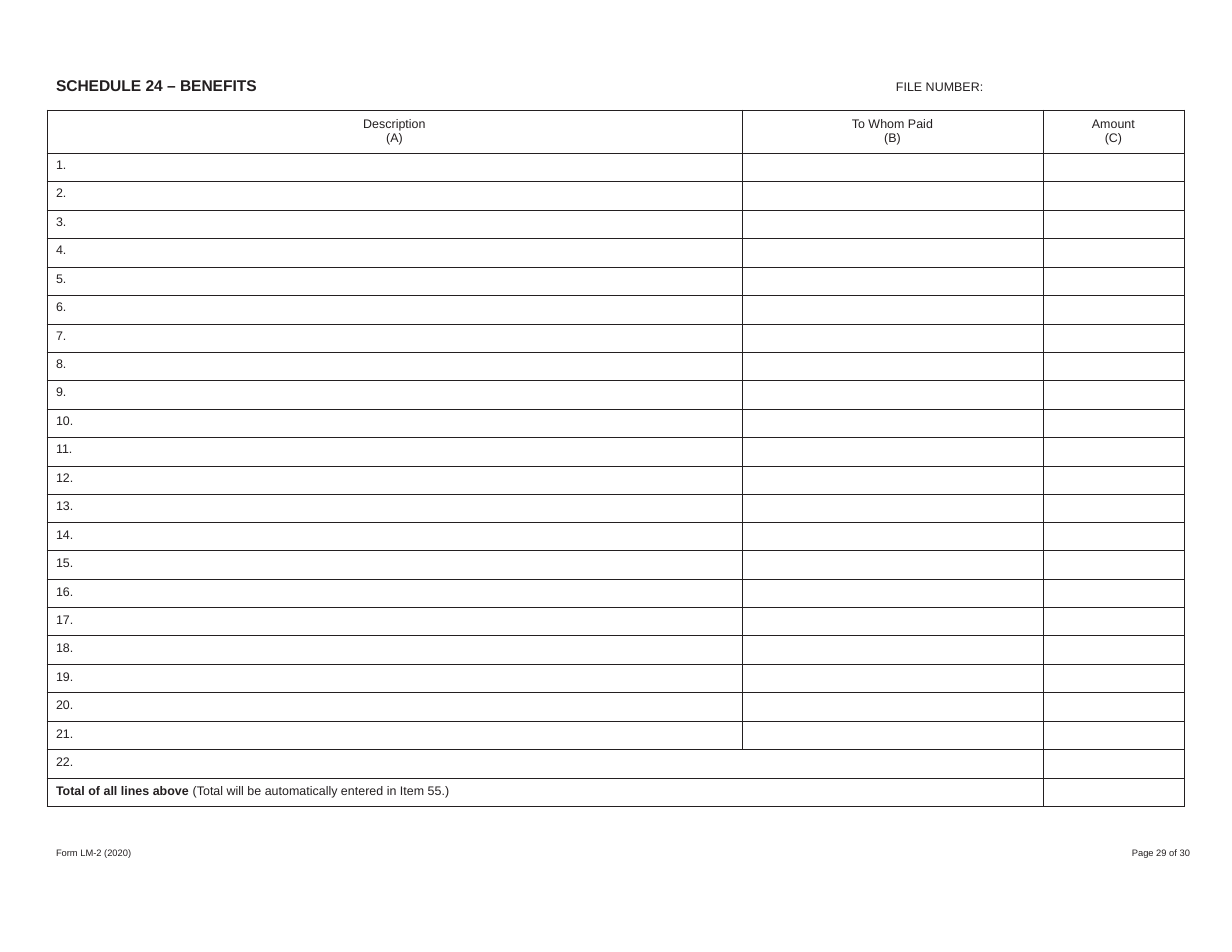
from lxml import etree
from pptx import Presentation
from pptx.dml.color import RGBColor
from pptx.enum.text import MSO_ANCHOR, MSO_AUTO_SIZE, PP_ALIGN
from pptx.oxml.ns import qn
from pptx.util import Emu, Pt

TOP, MIDDLE = MSO_ANCHOR.TOP, MSO_ANCHOR.MIDDLE
LEFT, CENTER, RIGHT = PP_ALIGN.LEFT, PP_ALIGN.CENTER, PP_ALIGN.RIGHT
INK = "231F20"
BORDER_WIDTH = Pt(0.5)
EMU_PER_PX = 914400 / 112


def px(length):
    return Emu(round(length * EMU_PER_PX))


def write(paragraph, spans, size, align=LEFT):
    """Fill a paragraph with (text, bold) spans."""
    paragraph.alignment = align
    for text, bold in spans:
        paragraph.add_line_break() if text == "\n" else None
        if text == "\n":
            continue
        span = paragraph.add_run()
        span.text = text
        for name, value in {"name": "Arial", "size": Pt(size), "bold": bold}.items():
            setattr(span.font, name, value)
        span.font.color.rgb = RGBColor.from_string(INK)


deck = Presentation()
deck.slide_width, deck.slide_height = px(1232), px(952)
page = deck.slides.add_slide(deck.slide_layouts[5])

# Heading, file number and footer
labels = [
    (page.shapes.title, "SCHEDULE 24 – BENEFITS", (56, 76, 204, 20), 10, True, LEFT),
    (None, "FILE NUMBER:", (896, 79, 91, 18), 8, False, LEFT),
    (None, "Form LM-2 (2020)", (56, 847, 202, 12), 6, False, LEFT),
    (None, "Page 29 of 30", (1120, 847, 70, 12), 6, False, RIGHT),
]
for box, text, place, size, bold, align in labels:
    left, top, width, height = map(px, place)
    if box is None:
        box = page.shapes.add_textbox(left, top, width, height)
    box.left, box.top, box.width, box.height = left, top, width, height
    frame = box.text_frame
    frame_format = {
        "margin_left": 0, "margin_top": 0, "margin_right": 0, "margin_bottom": 0,
        "word_wrap": True, "auto_size": MSO_AUTO_SIZE.NONE, "vertical_anchor": TOP,
    }
    for name, value in frame_format.items():
        setattr(frame, name, value)
    write(frame.paragraphs[0], [(text, bold)], size, align)

# Benefits table: a header, 22 numbered lines and a total
COLUMN_WIDTHS = [695, 301, 141]
HEADER_HEIGHT, LINES_HEIGHT, LINE_COUNT = 43, 654, 23
row_edges = [round(i * LINES_HEIGHT / LINE_COUNT) for i in range(LINE_COUNT + 1)]
row_heights = [HEADER_HEIGHT] + [b - a for a, b in zip(row_edges, row_edges[1:])]

table = page.shapes.add_table(
    len(row_heights), len(COLUMN_WIDTHS), px(47), px(110),
    px(sum(COLUMN_WIDTHS)), px(sum(row_heights)),
).table
table.first_row = table.horz_banding = False
for column, width in zip(table.columns, COLUMN_WIDTHS):
    column.width = px(width)
for row, height in zip(table.rows, row_heights):
    row.height = px(height)
for row in (22, 23):
    table.cell(row, 0).merge(table.cell(row, 1))

for column, heading in enumerate(["Description", "To Whom Paid", "Amount"]):
    spans = [(heading, False), ("\n", False), (f"({'ABC'[column]})", False)]
    write(table.cell(0, column).text_frame.paragraphs[0], spans, 8, CENTER)
for number in range(1, LINE_COUNT):
    write(table.cell(number, 0).text_frame.paragraphs[0], [(f"{number}.", False)], 8)
total = [("Total of all lines above ", True),
         ("(Total will be automatically entered in Item 55.)", False)]
write(table.cell(LINE_COUNT, 0).text_frame.paragraphs[0], total, 8)

for row_index, row in enumerate(table.rows):
    for cell in row.cells:
        is_header = row_index == 0
        cell_format = {
            "margin_left": 0 if is_header else px(9), "margin_right": 0,
            "margin_top": 0 if is_header else px(5), "margin_bottom": 0,
            "vertical_anchor": MIDDLE if is_header else TOP,
        }
        for name, value in cell_format.items():
            setattr(cell, name, value)
        properties = cell._tc.get_or_add_tcPr()
        for side in ("a:lnL", "a:lnR", "a:lnT", "a:lnB"):
            line = etree.SubElement(properties, qn(side), w=str(BORDER_WIDTH))
            fill = etree.SubElement(line, qn("a:solidFill"))
            etree.SubElement(fill, qn("a:srgbClr"), val=INK)
        cell.fill.background()
        # The end mark sets the height of an empty cell
        etree.SubElement(cell.text_frame.paragraphs[0]._p, qn("a:endParaRPr"), sz="800")

deck.save("out.pptx")
